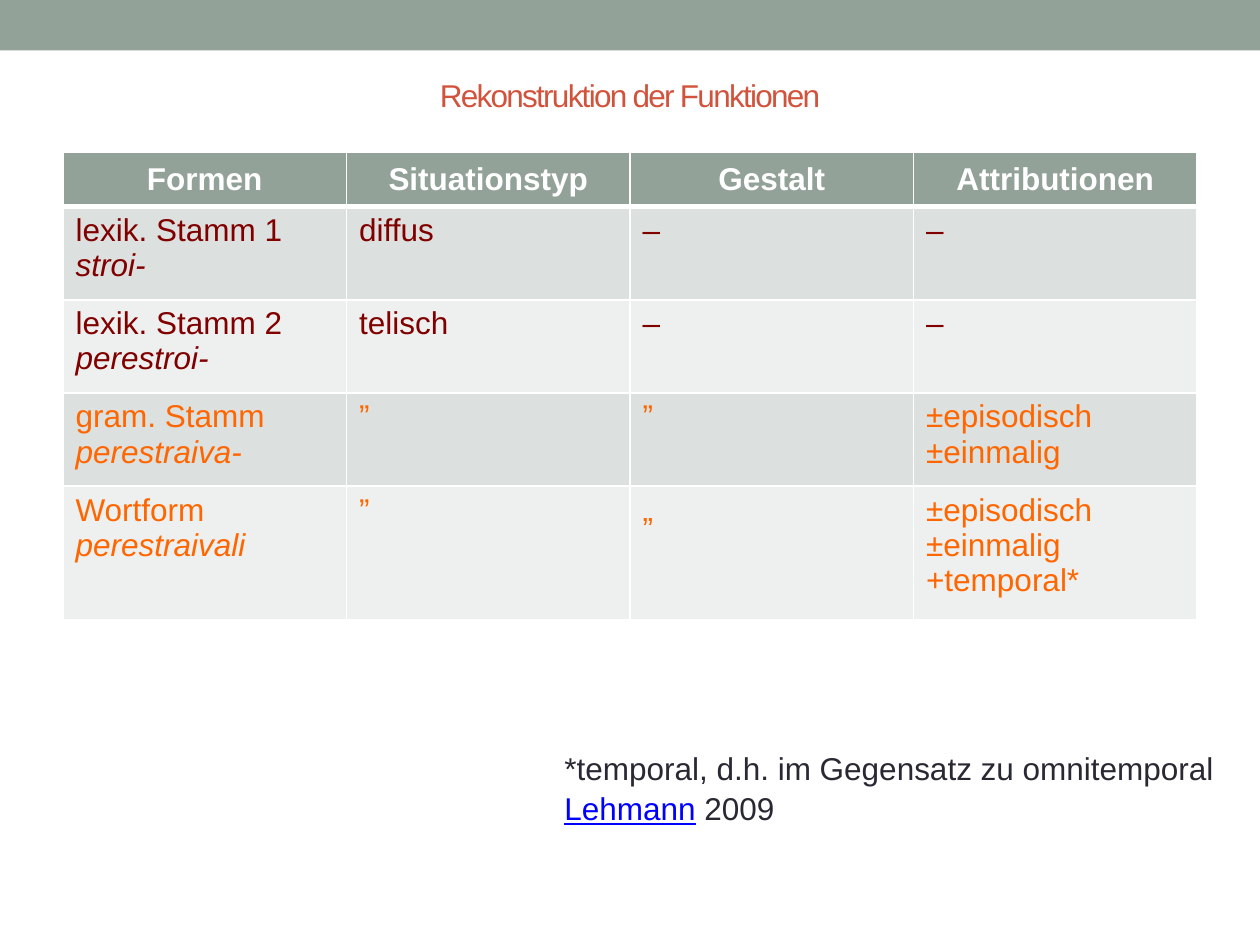
"""Build the slide on the reconstruction of functions with its table of forms."""
from lxml import etree
from pptx import Presentation
from pptx.dml.color import RGBColor
from pptx.enum.shapes import MSO_SHAPE
from pptx.enum.text import MSO_ANCHOR, PP_ALIGN
from pptx.oxml.ns import qn
from pptx.util import Inches, Pt

RECTANGLE = MSO_SHAPE.RECTANGLE
MIDDLE, TOP = MSO_ANCHOR.MIDDLE, MSO_ANCHOR.TOP
CENTER, LEFT = PP_ALIGN.CENTER, PP_ALIGN.LEFT
COLORS = {
    "sage": "93A299", "title": "D2533C", "white": "FFFFFF", "dark_band": "DCE0DE",
    "light_band": "EEF0EF", "lexical": "800000", "grammatical": "FF6600",
    "text": "292934", "link": "0000FF",
}


def add_run(paragraph, text, color, bold=False, italic=False, underline=False):
    run = paragraph.add_run()
    run.text = text
    font = run.font
    font.name, font.size = "Arial", Pt(18)
    font.bold, font.italic, font.underline = bold, italic, underline
    font.color.rgb = RGBColor.from_string(COLORS[color])
    return run


def add_border(cell, side, width):
    line = etree.SubElement(cell._tc.get_or_add_tcPr(), qn(f"a:ln{side}"), w=str(Pt(width)))
    fill = etree.SubElement(line, qn("a:solidFill"))
    etree.SubElement(fill, qn("a:srgbClr"), val=COLORS["white"])


prs = Presentation()
prs.slide_width, prs.slide_height = Inches(10), Inches(7.5)
slide = prs.slides.add_slide(prs.slide_layouts[5])

banner = slide.shapes.add_shape(RECTANGLE, 0, 0, Inches(10), Inches(0.4))
banner.shadow.inherit = False
banner.fill.solid()
banner.fill.fore_color.rgb = RGBColor.from_string(COLORS["sage"])
banner.line.fill.background()

title = slide.shapes.title
title.left, title.top, title.width, title.height = Inches(0.5), Inches(0.39), Inches(9), Inches(0.72)
title.text_frame.vertical_anchor = MIDDLE
heading = title.text_frame.paragraphs[0]
heading.alignment = CENTER
heading_run = add_run(heading, "Rekonstruktion der Funktionen", "title")
heading_run._r.get_or_add_rPr().set("spc", "-100")

header = ["Formen", "Situationstyp", "Gestalt", "Attributionen"]
forms = [
    ("lexical", "lexik. Stamm 1 ", "stroi-", "diffus", "–", ["–"]),
    ("lexical", "lexik. Stamm 2 ", "perestroi-", "telisch", "–", ["–"]),
    ("grammatical", "gram. Stamm ", "perestraiva-", "”", "”", ["±episodisch", "±einmalig"]),
    ("grammatical", "Wortform ", "perestraivali", "”", "„",
     ["±episodisch", "±einmalig", "+temporal*"]),
]
rows = [("white", [[[name]] for name in header])]
for color, label, stem, situation, gestalt, attributes in forms:
    rows.append((color, [[[label, stem]], [[situation]], [[gestalt]], [[a] for a in attributes]]))

functions = slide.shapes.add_table(
    len(rows), len(header), Inches(0.5), Inches(1.21), Inches(9), Inches(3.71)).table
for column in functions.columns:
    column.width = Inches(2.25)
for row, height in zip(functions.rows, [0.43, 0.74, 0.74, 0.74, 1.06]):
    row.height = Inches(height)

for r, (color, contents) in enumerate(rows):
    is_header = r == 0
    band = "sage" if is_header else "dark_band" if r % 2 else "light_band"
    for c, paragraphs in enumerate(contents):
        cell = functions.cell(r, c)
        cell.vertical_anchor = MIDDLE if is_header else TOP
        for side, width in zip("LRTB", [1, 1, 3 if r == 1 else 1, 3 if is_header else 1]):
            add_border(cell, side, width)
        cell.fill.solid()
        cell.fill.fore_color.rgb = RGBColor.from_string(COLORS[band])
        for p, texts in enumerate(paragraphs):
            paragraph = cell.text_frame.add_paragraph() if p else cell.text_frame.paragraphs[0]
            paragraph.alignment = CENTER if is_header else LEFT
            for t, text in enumerate(texts):
                add_run(paragraph, text, color, bold=is_header, italic=t == 1)

footnote = slide.shapes.add_textbox(Inches(4.38), Inches(5.88), Inches(5.41), Inches(0.71)).text_frame
footnote.word_wrap = False
explanation = footnote.paragraphs[0]
add_run(explanation, "*temporal, d.h. im Gegensatz zu omnitemporal", "text")
citation = footnote.add_paragraph()
add_run(citation, "Lehmann", "link", underline=True)
add_run(citation, " 2009", "text")
for paragraph in footnote.paragraphs:
    paragraph.line_spacing = 1.05

prs.save("out.pptx")
